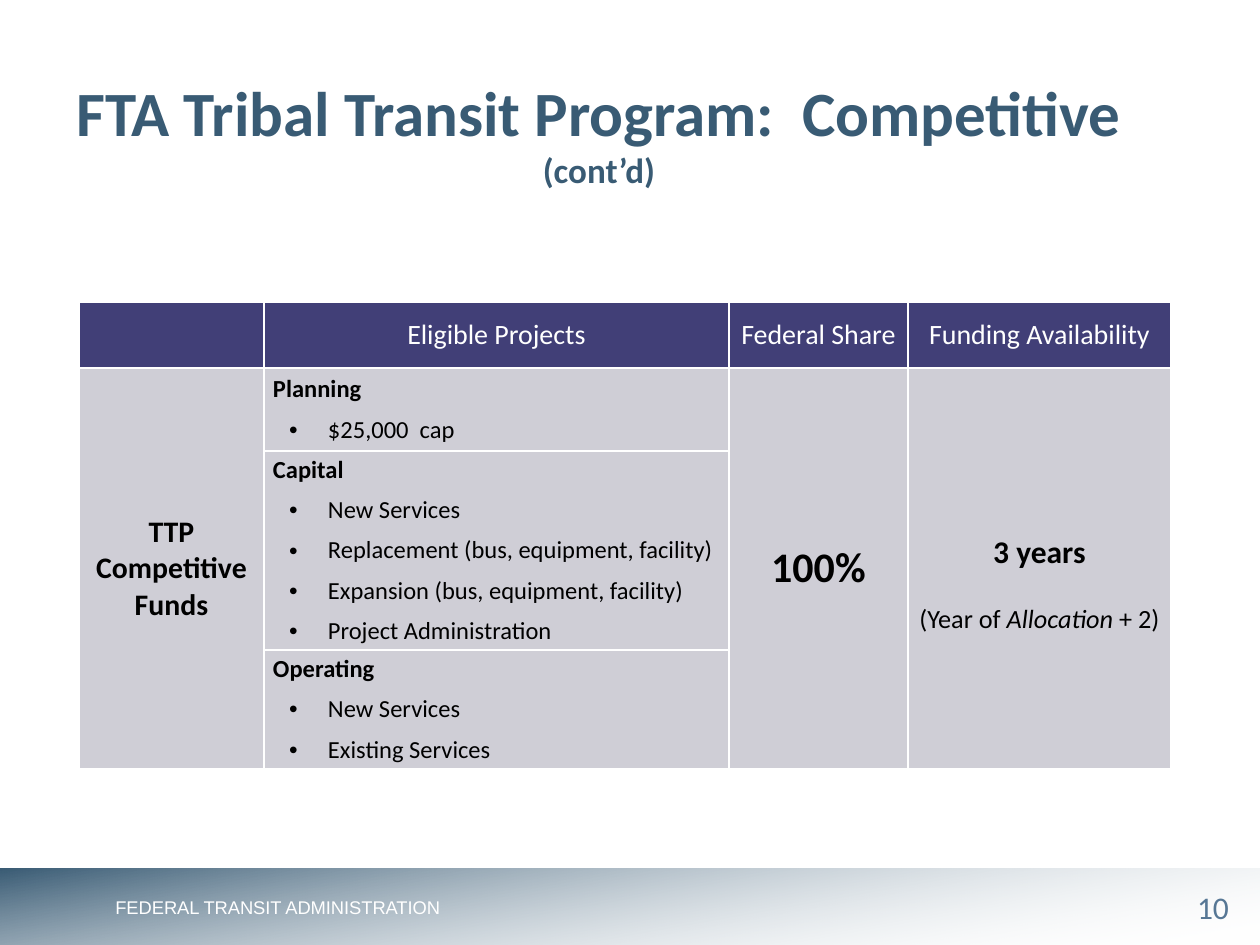
import dataclasses

import lxml.etree
import pptx
import pptx.dml.color
import pptx.enum.shapes
import pptx.enum.text
import pptx.oxml.ns
import pptx.util

SCALE = 914400 / 126
CENTER = pptx.enum.text.PP_ALIGN.CENTER
LEFT = pptx.enum.text.PP_ALIGN.LEFT
MIDDLE = pptx.enum.text.MSO_ANCHOR.MIDDLE


@dataclasses.dataclass(frozen=True)
class Theme:
    """Colours, fonts and type sizes of the slide."""
    font: str = "Calibri"
    footer_font: str = "Arial"
    heading: str = "395B74"
    number: str = "577795"
    header: str = "413F77"
    body: str = "CFCED6"
    white: str = "FFFFFF"
    black: str = "000000"
    title_size: float = 36
    subtitle_size: float = 20
    header_size: float = 16
    program_size: float = 17
    list_size: float = 14
    share_size: float = 24
    years_size: float = 18
    note_size: float = 15
    number_size: float = 18
    footer_size: float = 10.5


THEME = Theme()


def px(length):
    """Turn px into EMU."""
    return pptx.util.Emu(round(length * SCALE))


def rgb(value):
    """Turn a hex string into a colour."""
    return pptx.dml.color.RGBColor.from_string(value)


def add_element(parent, tag, **attributes):
    """Append a drawing element to a parent."""
    return lxml.etree.SubElement(parent, pptx.oxml.ns.qn(tag), attributes)


def next_paragraph(frame):
    """Give the empty first paragraph of a frame, or a new one."""
    return frame.paragraphs[0] if not frame.text else frame.add_paragraph()


def add_text(frame, text, paragraph=None, size=14, color=THEME.black, font=THEME.font,
             bold=False, italic=False, align=LEFT, before=0, after=0, bullet=False):
    """Write text in a given or new paragraph and return the paragraph."""
    if paragraph is None:
        paragraph = next_paragraph(frame)
        if bullet:
            properties = paragraph._p.get_or_add_pPr()
            properties.set("marL", str(px(55)))
            properties.set("indent", str(px(-39)))
            add_element(properties, "a:buFont", typeface="Arial")
            add_element(properties, "a:buChar", char="•")
        paragraph.alignment = align
        paragraph.space_before = pptx.util.Pt(before)
        paragraph.space_after = pptx.util.Pt(after)
    run = paragraph.add_run()
    run.text = text
    run.font.size = pptx.util.Pt(size)
    run.font.name = font
    run.font.bold = bold
    run.font.italic = italic
    run.font.color.rgb = rgb(color)
    return paragraph


def add_title(slide, left, top, width, height):
    """Place the two-line title."""
    title = slide.shapes.title
    title.left, title.top, title.width, title.height = map(px, (left, top, width, height))
    frame = title.text_frame
    frame.vertical_anchor = MIDDLE
    style = dict(color=THEME.heading, bold=True, align=CENTER)
    add_text(frame, "FTA Tribal Transit Program:  Competitive", size=THEME.title_size, **style)
    add_text(frame, "(cont’d)", size=THEME.subtitle_size, **style)


def add_footer(slide, left, top, width, height):
    """Place the fading band with the agency name and slide number."""
    band = slide.shapes.add_shape(pptx.enum.shapes.MSO_SHAPE.RECTANGLE,
                                  *map(px, (left, top, width, height)))
    band.shadow.inherit = False
    band.line.fill.background()
    band.fill.gradient()
    band.fill.gradient_angle = 280
    for stop, color in zip(band.fill.gradient_stops, (THEME.heading, THEME.white)):
        stop.color.rgb = rgb(color)
    colors = list(band.element.spPr.iter(pptx.oxml.ns.qn("a:srgbClr")))
    add_element(colors[-1], "a:alpha", val="0")

    agency = slide.shapes.add_textbox(*map(px, (left + 103, top + 21, 359, 35)))
    agency.text_frame.word_wrap = False
    add_text(agency.text_frame, "FEDERAL TRANSIT ADMINISTRATION", size=THEME.footer_size,
             font=THEME.footer_font, color=THEME.white)

    number = slide.shapes.add_textbox(*map(px, (left + width - 94, top + 14, 94, 48)))
    frame = number.text_frame
    frame.word_wrap = True
    frame.margin_left = frame.margin_right = px(9)
    frame.margin_top = frame.margin_bottom = px(5)
    add_text(frame, "10", size=THEME.number_size, color=THEME.number, align=CENTER)


def format_cell(cell, fill):
    """Set the fill, insets and white borders of a cell."""
    cell.vertical_anchor = MIDDLE
    cell.margin_left = cell.margin_right = px(9)
    cell.margin_top = cell.margin_bottom = px(4)
    properties = cell._tc.get_or_add_tcPr()
    for side in ("a:lnL", "a:lnR", "a:lnT", "a:lnB"):
        line = add_element(properties, side, w="12700")
        add_element(add_element(line, "a:solidFill"), "a:srgbClr", val=THEME.white)
    cell.fill.solid()
    cell.fill.fore_color.rgb = rgb(fill)


def add_projects(cell, heading, items):
    """Write a bold heading and its bulleted projects."""
    frame = cell.text_frame
    add_text(frame, heading, size=THEME.list_size, bold=True, after=6)
    for item in items:
        after = 0 if item == items[-1] else 6
        add_text(frame, item, size=THEME.list_size, bullet=True, after=after)


def add_funding_table(slide, left, top, columns, rows):
    """Place the funding table with its merged outer cells."""
    table = slide.shapes.add_table(len(rows), len(columns), px(left), px(top),
                                   px(sum(columns)), px(sum(rows))).table
    for column, width in zip(table.columns, columns):
        column.width = px(width)
    for index, (row, height) in enumerate(zip(table.rows, rows)):
        row.height = px(height)
        for cell in row.cells:
            format_cell(cell, THEME.body if index else THEME.header)
    for column in (0, 2, 3):
        table.cell(1, column).merge(table.cell(len(rows) - 1, column))

    for column, text in enumerate(("Eligible Projects", "Federal Share", "Funding Availability"), 1):
        add_text(table.cell(0, column).text_frame, text, size=THEME.header_size,
                 color=THEME.white, align=CENTER)
    for text in ("TTP", "Competitive Funds"):
        add_text(table.cell(1, 0).text_frame, text, size=THEME.program_size,
                 bold=True, align=CENTER)
    projects = {
        "Planning": ["$25,000  cap"],
        "Capital": ["New Services", "Replacement (bus, equipment, facility)",
                    "Expansion (bus, equipment, facility)", "Project Administration"],
        "Operating": ["New Services", "Existing Services"],
    }
    for row, (heading, items) in enumerate(projects.items(), 1):
        add_projects(table.cell(row, 1), heading, items)
    add_text(table.cell(1, 2).text_frame, "100%", size=THEME.share_size, bold=True, align=CENTER)

    availability = table.cell(1, 3)
    availability.margin_top = px(36)
    frame = availability.text_frame
    add_text(frame, "3 years", size=THEME.years_size, bold=True, align=CENTER)
    note = add_text(frame, "(Year of ", size=THEME.note_size, align=CENTER, before=18)
    add_text(frame, "Allocation ", paragraph=note, size=THEME.note_size, italic=True)
    add_text(frame, "+ 2)", paragraph=note, size=THEME.note_size)


def main():
    """Build and save the presentation."""
    presentation = pptx.Presentation()
    presentation.slide_width, presentation.slide_height = px(1260), px(945)
    slide = presentation.slides.add_slide(presentation.slide_layouts[5])
    add_footer(slide, 0, 869, 1260, 76)
    add_funding_table(slide, 79, 302, (185, 465, 179, 263), (66, 83, 199, 119))
    add_title(slide, 58, 69, 1082, 126)
    presentation.save("out.pptx")


if __name__ == "__main__":
    main()
